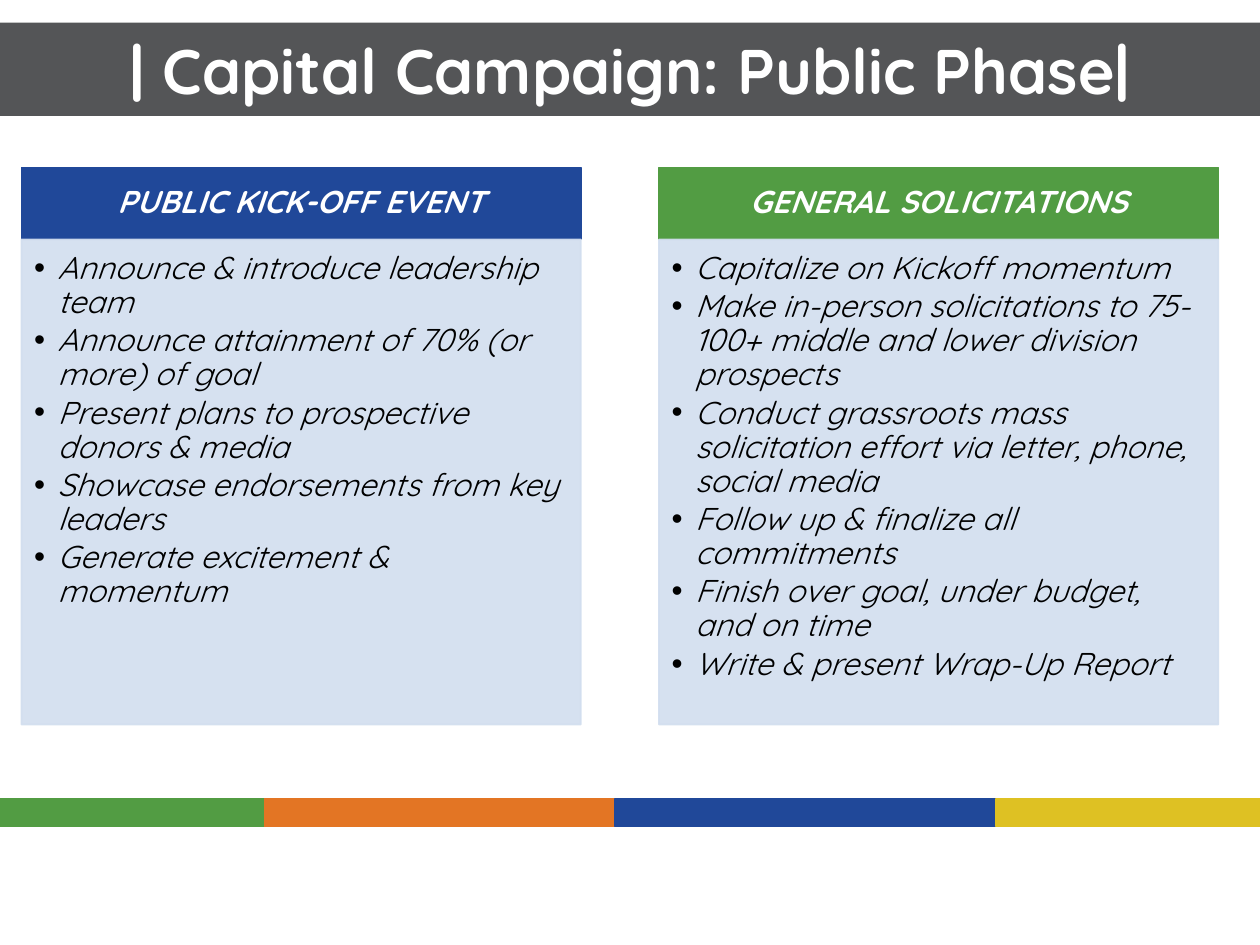
"""Build the Capital Campaign public phase slide."""
from lxml.etree import SubElement
from pptx import Presentation
from pptx.dml.color import RGBColor
from pptx.enum.shapes import MSO_SHAPE
from pptx.enum.text import MSO_ANCHOR, MSO_AUTO_SIZE, PP_ALIGN
from pptx.oxml.ns import qn
from pptx.util import Pt

COLORS = {
    "gray": "545557", "blue": "204899", "green": "529C43", "orange": "E37524",
    "yellow": "DEC123", "panel": "D2DEEF", "white": "FFFFFF", "black": "000000",
}
COLUMNS = [
    (12.24, "blue", "PUBLIC KICK-OFF EVENT", [
        "Announce & introduce leadership team",
        "Announce attainment of 70% (or more) of goal",
        "Present plans to prospective donors & media",
        "Showcase endorsements from key leaders",
        "Generate excitement & momentum",
    ]),
    (376.56, "green", "GENERAL SOLICITATIONS", [
        "Capitalize on Kickoff momentum",
        "Make in-person solicitations to 75-100+ middle and lower division prospects",
        "Conduct grassroots mass solicitation effort via letter, phone, social media",
        "Follow up & finalize all commitments",
        "Finish over goal, under budget, and on time",
        "Write & present Wrap-Up Report",
    ]),
]
COLUMN_TOP, COLUMN_WIDTH, HEADER_HEIGHT, PANEL_HEIGHT = 95.76, 319.68, 41.04, 277.2
STRIPES = [("green", 0, 151.2), ("orange", 151.2, 351.36),
           ("blue", 351.36, 569.16), ("yellow", 569.16, 720)]


def paint(shape, place, color, outlined=True):
    shape.left, shape.top, shape.width, shape.height = map(Pt, place)
    shape.fill.solid()
    shape.fill.fore_color.rgb = RGBColor.from_string(COLORS[color])
    if outlined:
        shape.line.color.rgb = RGBColor.from_string(COLORS[color])
        shape.line.width = Pt(1)
    else:
        shape.line.fill.background()


def write(shape, text, size, color, bold, italic, align, anchor, margins, spacing, after):
    frame = shape.text_frame
    frame.text = text
    frame.word_wrap = True
    frame.auto_size = MSO_AUTO_SIZE.NONE
    frame.vertical_anchor = anchor
    (frame.margin_left, frame.margin_top,
     frame.margin_right, frame.margin_bottom) = map(Pt, margins)
    for para in frame.paragraphs:
        para.alignment = align
        para.line_spacing = spacing
        para.space_before = Pt(0)
        para.space_after = Pt(after)
        for span in para.runs:
            font = span.font
            font.name, font.size, font.bold, font.italic = "Quicksand", Pt(size), bold, italic
            font.color.rgb = RGBColor.from_string(COLORS[color])


deck = Presentation()
deck.slide_width, deck.slide_height = Pt(720), Pt(540)
page = deck.slides.add_slide(deck.slide_layouts.get_by_name("Comparison"))

title = page.shapes.title
paint(title, (0, 12.96, 720, 53.28), "gray", outlined=False)
write(title, "| Capital Campaign: Public Phase|", 36, "white", True, False,
      PP_ALIGN.CENTER, MSO_ANCHOR.MIDDLE, (7.2, 3.6, 7.2, 3.6), 1.0, 0)

for index, (left, color, heading, items) in enumerate(COLUMNS):
    header = page.placeholders[2 * index + 1]
    paint(header, (left, COLUMN_TOP, COLUMN_WIDTH, HEADER_HEIGHT), color)
    write(header, heading, 18, "white", True, True,
          PP_ALIGN.CENTER, MSO_ANCHOR.MIDDLE, (10, 5.76, 10, 5.76), 0.9, 0)

    panel = page.placeholders[2 * index + 2]
    paint(panel, (left, COLUMN_TOP + HEADER_HEIGHT, COLUMN_WIDTH, PANEL_HEIGHT), "panel")
    for tint in panel._element.spPr.iter(qn("a:srgbClr")):
        SubElement(tint, qn("a:alpha"), val="90000")
    write(panel, "\n".join(items), 18, "black", False, True,
          PP_ALIGN.LEFT, MSO_ANCHOR.TOP, (7.2, 7.2, 10, 11.52), 0.9, 2.5)
    for para in panel.text_frame.paragraphs:
        properties = para._p.get_or_add_pPr()
        properties.set("marL", str(Pt(13.5)))
        properties.set("indent", str(Pt(-13.5)))

for color, start, end in STRIPES:
    place = (start, 456.48, end - start, 15.84)
    stripe = page.shapes.add_shape(MSO_SHAPE.RECTANGLE, *map(Pt, place))
    stripe.shadow.inherit = False
    paint(stripe, place, color)

deck.save("out.pptx")
